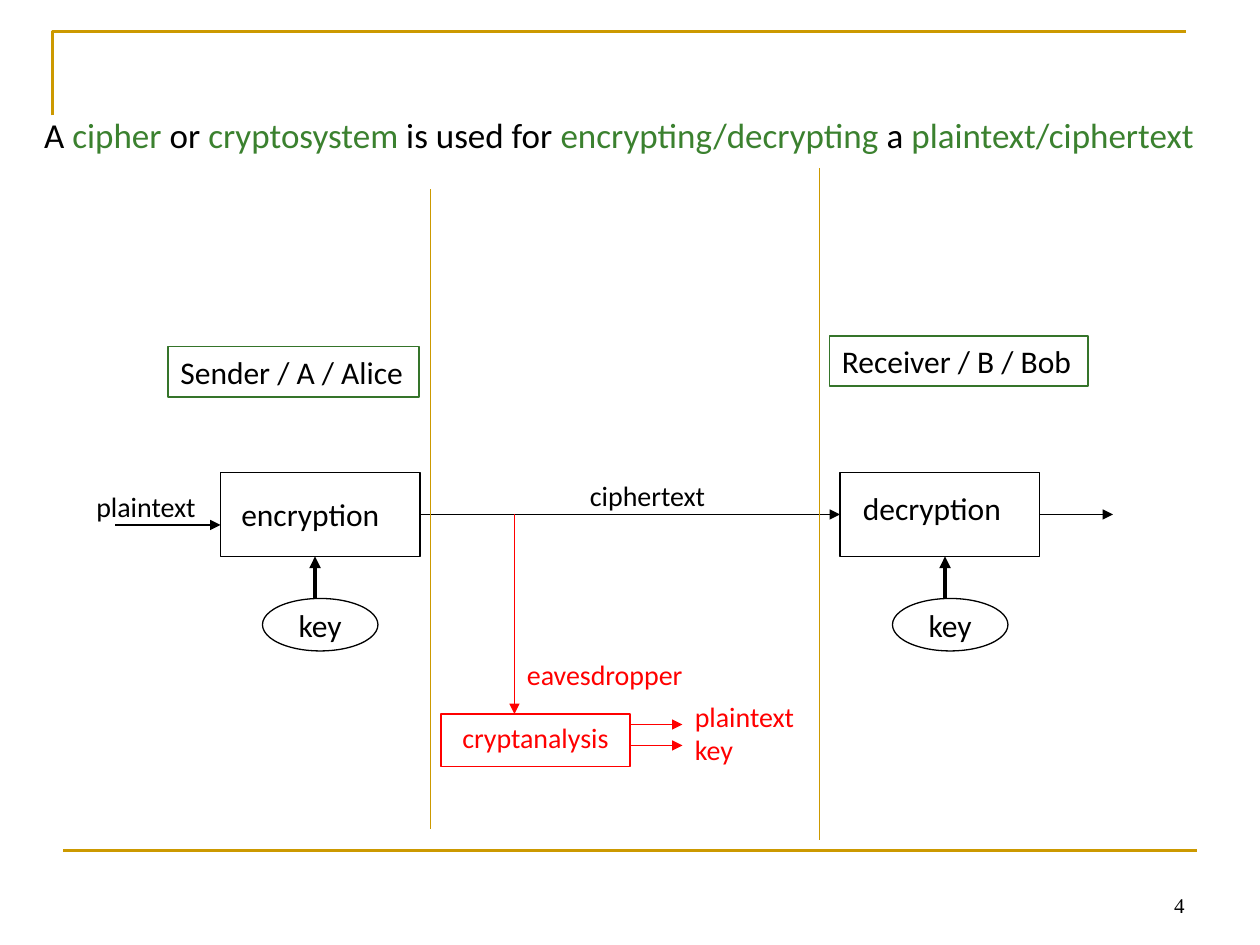
from lxml import etree
from pptx import Presentation
from pptx.dml.color import RGBColor
from pptx.enum.shapes import MSO_CONNECTOR, MSO_SHAPE
from pptx.enum.text import MSO_ANCHOR, MSO_AUTO_SIZE, PP_ALIGN
from pptx.oxml.ns import qn
from pptx.util import Inches, Pt

RECT, OVAL = MSO_SHAPE.RECTANGLE, MSO_SHAPE.OVAL
LEFT, CENTER, RIGHT = PP_ALIGN.LEFT, PP_ALIGN.CENTER, PP_ALIGN.RIGHT
TOP, MIDDLE, BOTTOM = MSO_ANCHOR.TOP, MSO_ANCHOR.MIDDLE, MSO_ANCHOR.BOTTOM
color = RGBColor.from_string
BLACK, RED, GOLD, GREEN, FRAME = "000000", "FF0000", "CC9900", "3B812F", "35742A"

prs = Presentation()
prs.slide_width, prs.slide_height = Inches(10), Inches(7.5)
UNIT = prs.slide_width // 120  # the slide is a grid of 120 columns by 90 rows
slide = prs.slides.add_slide(prs.slide_layouts[5])


def write(shape, lines, size, align=LEFT, anchor=TOP, wrap=False, font="Calibri"):
    """Fill a shape with lines, each a list of (text, colour) runs."""
    frame = shape.text_frame
    frame.auto_size = MSO_AUTO_SIZE.NONE
    frame.word_wrap, frame.vertical_anchor = wrap, anchor
    for i, runs in enumerate(lines):
        paragraph = frame.add_paragraph() if i else frame.paragraphs[0]
        paragraph.alignment = align
        for text, tint in runs:
            run = paragraph.add_run()
            run.text = text
            run.font.name, run.font.size = font, Pt(size)
            run.font.color.rgb = color(tint)


def connect(x1, y1, x2, y2, tint, weight, arrow=True):
    """Draw a straight line in grid units, with an arrowhead at its end."""
    line = slide.shapes.add_connector(
        MSO_CONNECTOR.STRAIGHT, *(int(v * UNIT) for v in (x1, y1, x2, y2)))
    line.line.color.rgb, line.line.width = color(tint), Pt(weight)
    if arrow:
        etree.SubElement(line.line._get_or_add_ln(), qn("a:tailEnd"), type="triangle")
    etree.SubElement(line._element.spPr, qn("a:effectLst"))


# Gold frame: corner at the top, rule at the bottom
builder = slide.shapes.build_freeform(5, 11, scale=UNIT)
builder.add_line_segments([(5, 3), (113, 3)], close=False)
corner = builder.convert_to_shape()
corner.fill.background()
corner.line.color.rgb, corner.line.width = color(GOLD), Pt(1.5)
corner.shadow.inherit = False
connect(6, 81, 114, 81, GOLD, 1.5, arrow=False)

# Heading sentence
heading = slide.shapes.title
heading.left, heading.top = Inches(0.25), Inches(0.85)
heading.width, heading.height = Inches(9.5), Inches(0.5)
write(heading, [[("A ", BLACK), ("cipher", GREEN), (" or ", BLACK),
                 ("cryptosystem", GREEN), (" is used for ", BLACK),
                 ("encrypting/decrypting", GREEN), (" a ", BLACK),
                 ("plaintext/ciphertext", GREEN)]], 20, wrap=True)

# Boxes, party names and keys: kind, place, line, weight, fill, text, alignment, anchor
for kind, x, y, w, h, tint, weight, fill, text, align, anchor in [
    (RECT, 21, 45, 19, 8, BLACK, 0.75, None, "", LEFT, TOP),
    (RECT, 80, 45, 19, 8, BLACK, 0.75, None, "", LEFT, TOP),
    (RECT, 42, 68, 18, 5, RED, 0.75, None, "", LEFT, TOP),
    (OVAL, 25, 57, 11, 5, BLACK, 0.75, None, "key", CENTER, MIDDLE),
    (OVAL, 85, 57, 11, 5, BLACK, 0.75, None, "key", CENTER, MIDDLE),
    (RECT, 16, 33, 23.9, 4.8, FRAME, 1, "FFFFFF", "Sender / A / Alice", LEFT, TOP),
    (RECT, 79, 32, 24.6, 4.8, FRAME, 1, "FFFFFF", "Receiver / B / Bob", LEFT, TOP),
]:
    box = slide.shapes.add_shape(kind, *(int(v * UNIT) for v in (x, y, w, h)))
    box.shadow.inherit = False
    box.line.color.rgb, box.line.width = color(tint), Pt(weight)
    if fill:
        box.fill.solid()
        box.fill.fore_color.rgb = color(fill)
    else:
        box.fill.background()
    if text:
        write(box, [[(text, BLACK)]], 18, align, anchor)

# Arrows of the message, the keys and the eavesdropper
for x1, y1, x2, y2, tint, weight in [
    (11, 50, 21, 50, BLACK, 0.75),
    (40, 49, 80, 49, BLACK, 0.75),
    (99, 49, 106, 49, BLACK, 0.75),
    (30, 57, 30, 53, BLACK, 2.25),
    (90, 57, 90, 53, BLACK, 2.25),
    (49, 49, 49, 68, RED, 0.75),
    (60, 69, 65, 69, RED, 0.75),
    (60, 71, 65, 71, RED, 0.75),
]:
    connect(x1, y1, x2, y2, tint, weight)

# Labels
for x, y, w, h, lines, size, tint, align in [
    (21.8, 46.6, 15.7, 4.8, ["encryption"], 18, BLACK, LEFT),
    (81, 46, 15.7, 4.8, ["decryption"], 18, BLACK, LEFT),
    (8, 46, 12, 4.4, ["plaintext"], 16, BLACK, LEFT),
    (55, 45, 13.6, 4.4, ["ciphertext"], 16, BLACK, LEFT),
    (49, 62, 17.4, 4.4, ["eavesdropper"], 16, RED, LEFT),
    (42, 68, 18, 4.4, ["cryptanalysis"], 16, RED, CENTER),
    (65, 66, 12, 7.7, ["plaintext", "key"], 16, RED, LEFT),
]:
    label = slide.shapes.add_textbox(*(int(v * UNIT) for v in (x, y, w, h)))
    write(label, [[(text, tint)] for text in lines], size, align)

# Dividers between sender, channel and receiver
connect(41, 18, 41, 79, GOLD, 0.5, arrow=False)
connect(78, 16, 78, 80, GOLD, 0.5, arrow=False)

# Page number
page = slide.shapes.add_textbox(86 * UNIT, 82 * UNIT, 28 * UNIT, 6 * UNIT)
write(page, [[("4", BLACK)]], 12, RIGHT, BOTTOM, True, "Times New Roman")

prs.save("out.pptx")
